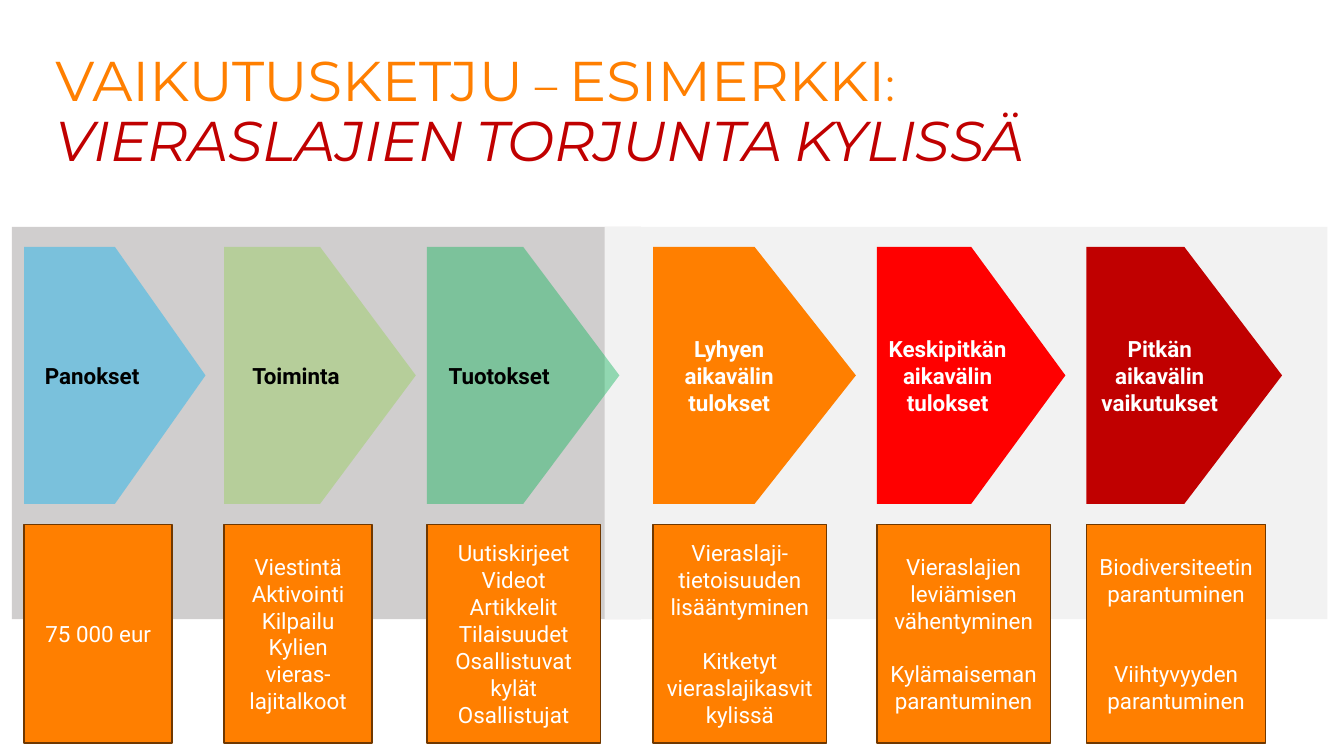
from lxml.etree import SubElement
from pptx import Presentation
from pptx.dml.color import RGBColor
from pptx.enum.shapes import MSO_SHAPE
from pptx.enum.text import MSO_ANCHOR, MSO_AUTO_SIZE, PP_ALIGN
from pptx.oxml.ns import qn
from pptx.util import Cm, Pt

ORANGE = RGBColor(0xFF, 0x7F, 0x00)
BROWN = RGBColor(0x70, 0x38, 0x00)
DARK_RED = RGBColor(0xC0, 0x00, 0x00)
RED = RGBColor(0xFF, 0x00, 0x00)
BLUE = RGBColor(0x00, 0xB0, 0xF0)
LIME = RGBColor(0x92, 0xD0, 0x50)
GREEN = RGBColor(0x00, 0xB0, 0x50)
GREY = RGBColor(0xD0, 0xCE, 0xCE)
LIGHT_GREY = RGBColor(0xF2, 0xF2, 0xF2)
BLACK = RGBColor(0x00, 0x00, 0x00)
WHITE = RGBColor(0xFF, 0xFF, 0xFF)

LINE_PT = 19.2  # height of one 16 pt text line
ARROW_TOP, ARROW_HEIGHT = 6.22, 6.48
BOX_TOP, BOX_HEIGHT = 13.21, 5.51

# Each step: left, arrow width, box width, colour, opacity %, label,
# box paragraphs, empty lines before the last paragraph
STEPS = [
    (0.61, 4.57, 3.73, BLUE, 41, "Panokset", ["75 000 eur"], 0),
    (5.65, 4.83, 3.73, LIME, 41, "Toiminta",
     ["Viestintä", "Aktivointi", "Kilpailu", "Kylien vieras-lajitalkoot"], 0),
    (10.76, 4.85, 4.37, GREEN, 40, "Tuotokset",
     ["Uutiskirjeet", "Videot", "Artikkelit", "Tilaisuudet",
      "Osallistuvat kylät", "Osallistujat"], 0),
    (16.46, 5.11, 4.37, ORANGE, 100, "Lyhyen aikavälin tulokset",
     ["Vieraslaji-tietoisuuden lisääntyminen",
      "Kitketyt vieraslajikasvit kylissä"], 1),
    (22.1, 4.75, 4.37, RED, 100, "Keskipitkän aikavälin tulokset",
     ["Vieraslajien leviämisen vähentyminen",
      "Kylämaiseman parantuminen"], 1),
    (27.38, 4.93, 4.52, DARK_RED, 100, "Pitkän aikavälin vaikutukset",
     ["Biodiversiteetin parantuminen", "Viihtyvyyden parantuminen"], 2),
]


def add_run(p, text, font, size, color, bold=False, italic=False):
    r = p.add_run()
    r.text = text
    r.font.name = font
    r.font.size = Pt(size)
    r.font.color.rgb = color
    r.font.bold = bold
    r.font.italic = italic
    return r


def add_block(s, kind, left, top, width, height, fill, opacity=100):
    sp = s.shapes.add_shape(kind, Cm(left), Cm(top), Cm(width), Cm(height))
    sp.shadow.inherit = False
    sp.fill.solid()
    sp.fill.fore_color.rgb = fill
    sp.line.fill.background()
    if opacity < 100:
        color = sp.fill._xPr.find(qn("a:solidFill")).find(qn("a:srgbClr"))
        SubElement(color, qn("a:alpha")).set("val", str(opacity * 1000))
    return sp


def add_text(sp, lines, color, bold=False, gap=0):
    tf = sp.text_frame
    tf.word_wrap = True
    tf.vertical_anchor = MSO_ANCHOR.MIDDLE
    for i, line in enumerate(lines):
        p = tf.add_paragraph() if i else tf.paragraphs[0]
        p.alignment = PP_ALIGN.CENTER
        add_run(p, line, "Roboto", 16, color, bold)
    if gap:
        p.space_before = Pt(gap * LINE_PT)


def add_title(s):
    title = s.shapes.title
    title.left, title.top = Cm(1.14), Cm(1.02)
    title.width, title.height = Cm(31.57), Cm(3.68)
    tf = title.text_frame
    tf.word_wrap = True
    tf.auto_size = MSO_AUTO_SIZE.NONE
    tf.vertical_anchor = MSO_ANCHOR.MIDDLE
    p = tf.paragraphs[0]
    p.alignment = PP_ALIGN.LEFT
    p.line_spacing = 0.9
    for text, color, italic in [
        ("VAIKUTUSKETJU – ESIMERKKI: ", ORANGE, False),
        ("VIERASLAJIEN TORJUNTA KYLISSÄ", DARK_RED, True),
    ]:
        r = add_run(p, text, "Montserrat", 40, color, italic=italic)
        r._r.get_or_add_rPr().set("cap", "small")


def add_step(s, left, arrow_width, box_width, fill, opacity, label, lines, gap):
    arrow = add_block(s, MSO_SHAPE.PENTAGON, left, ARROW_TOP, arrow_width,
                      ARROW_HEIGHT, fill, opacity)
    add_text(arrow, [label], BLACK if opacity < 100 else WHITE, bold=True)
    box = add_block(s, MSO_SHAPE.RECTANGLE, left, BOX_TOP, box_width,
                    BOX_HEIGHT, ORANGE)
    box.line.color.rgb = BROWN
    box.line.width = Pt(1)
    add_text(box, lines, WHITE, gap=gap)


def main():
    prs = Presentation()
    prs.slide_width, prs.slide_height = Cm(33.87), Cm(19.05)
    s = prs.slides.add_slide(prs.slide_layouts[5])
    add_title(s)

    # Background bands
    add_block(s, MSO_SHAPE.RECTANGLE, 0.3, 5.72, 15.85, 9.88, GREY)
    add_block(s, MSO_SHAPE.RECTANGLE, 15.24, 5.72, 18.21, 9.88, LIGHT_GREY)

    # Impact chain
    for step in STEPS:
        add_step(s, *step)

    prs.save("out.pptx")


if __name__ == "__main__":
    main()
